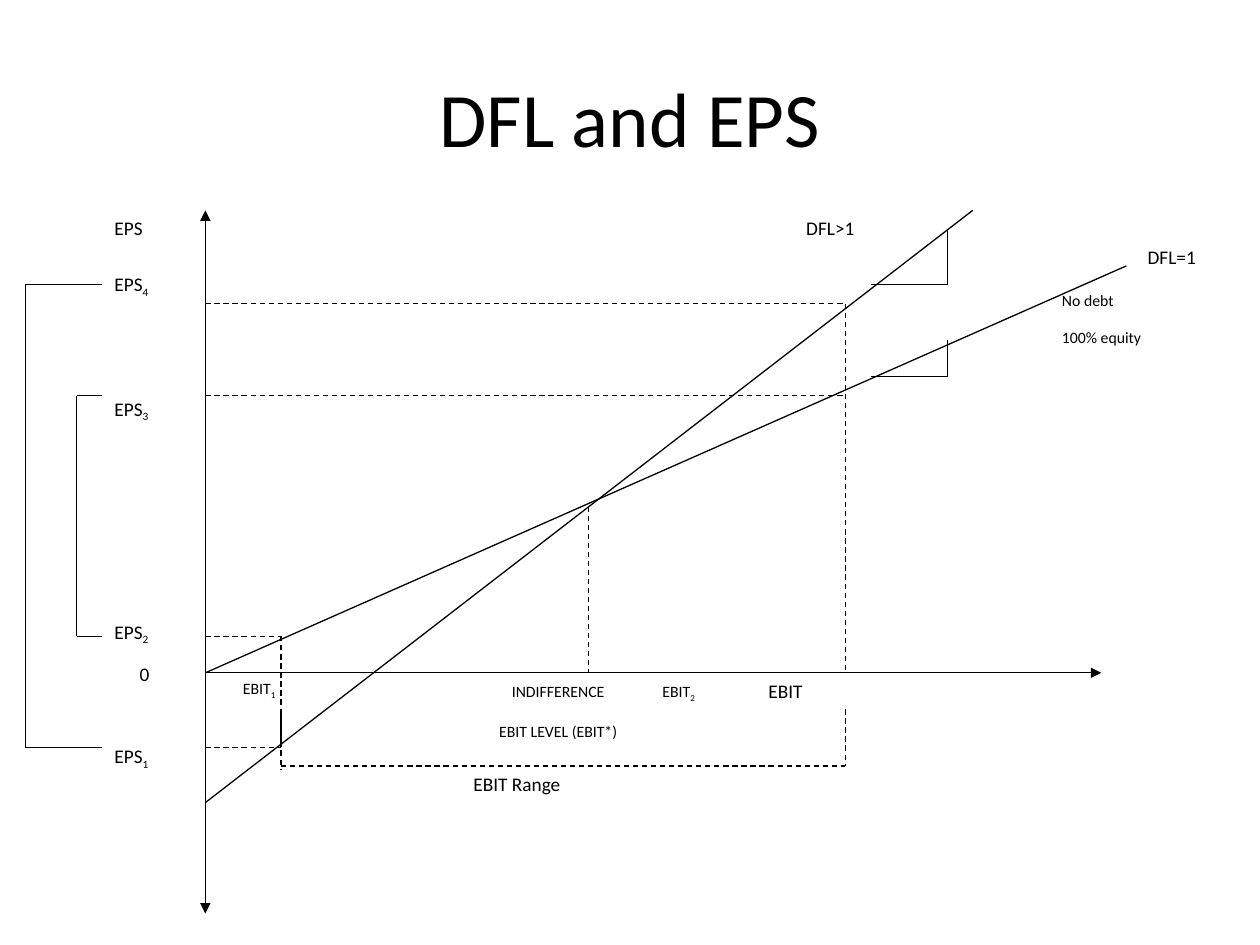
"""Build the DFL and EPS slide: a line diagram of EPS against EBIT."""
import pptx
import pptx.util
import pptx.dml.color
import pptx.enum.dml
import pptx.enum.shapes
import pptx.enum.text
import pptx.oxml
import pptx.oxml.ns

Inches = pptx.util.Inches
Align = pptx.enum.text.PP_ALIGN
INK = "000000"


def paint(color, code):
    color.rgb = pptx.dml.color.RGBColor.from_string(code)


def draw(x1, y1, x2, y2, dash=False, ends=()):
    line = slide.shapes.add_connector(
        pptx.enum.shapes.MSO_CONNECTOR.STRAIGHT,
        Inches(x1), Inches(y1), Inches(x2), Inches(y2))
    line.line.width = pptx.util.Pt(0.75)
    paint(line.line.color, INK)
    if dash:
        line.line.dash_style = pptx.enum.dml.MSO_LINE.DASH
    for end in ends:
        tip = pptx.oxml.parse_xml(
            f'<a:{end} {pptx.oxml.ns.nsdecls("a")} type="triangle"/>')
        line.line._get_or_add_ln().append(tip)
    flat = pptx.oxml.parse_xml(f'<a:effectLst {pptx.oxml.ns.nsdecls("a")}/>')
    line._element.spPr.append(flat)


deck = pptx.Presentation()
deck.slide_width, deck.slide_height = Inches(10), Inches(7.5)
slide = deck.slides.add_slide(deck.slide_layouts[5])

title = slide.shapes.title
title.left, title.top = Inches(0.5), Inches(0.3)
title.width, title.height = Inches(9), Inches(1.25)
frame = title.text_frame
frame.vertical_anchor = pptx.enum.text.MSO_ANCHOR.MIDDLE
para = frame.paragraphs[0]
para.alignment = Align.CENTER
run = para.add_run()
run.text = "DFL and EPS"
run.font.size = pptx.util.Pt(44)
run.font.name = "Calibri"
paint(run.font.color, INK)

left, zero = 1.63, 5.34
low, mid, high = 2.23, 4.67, 6.71
eps1, eps2, eps3, eps4 = 5.93, 5.05, 3.14, 2.41
base = 6.08

draw(left, zero, 8.74, zero, ends=["tailEnd"])
draw(left, 7.25, left, 1.67, ends=["headEnd", "tailEnd"])
draw(left, 6.37, 7.72, 1.67)
draw(left, zero, 8.94, 2.11)

for x, y in [(low, eps2), (low, eps1), (high, eps4), (high, eps3)]:
    draw(left, y, x, y, dash=True)
for x, top, end in [(low, eps2, eps1), (mid, 4.02, zero), (high, eps4, zero),
                    (low, 5.67, 6.11), (high, 5.63, base)]:
    draw(x, top, x, end, dash=True)
draw(low, base, high, base, dash=True)

for x, top, end in [(0.61, eps3, eps2), (0.2, 2.26, eps1)]:
    draw(x, top, x, end)
    for y in (top, end):
        draw(x, y, 0.81, y)

for top, end in [(2.7, 2.99), (1.82, 2.26)]:
    draw(7.52, top, 7.52, end)
    draw(6.91, end, 7.52, end)

labels = [
    (0.81, 1.67, 0.8, 11, [("EPS", "")]),
    (0.81, 2.11, 0.8, 11, [("EPS", "4")]),
    (0.81, 3.1, 0.8, 11, [("EPS", "3")]),
    (0.81, 4.87, 0.8, 11, [("EPS", "2")]),
    (1.01, 5.21, 0.6, 11, [("0", "")]),
    (0.81, 5.86, 0.8, 11, [("EPS", "1")]),
    (1.83, 5.34, 0.8, 9, [("EBIT", "1")]),
    (3.68, 5.36, 1.5, 9, [("INDIFFERENCE", ""), ("EBIT LEVEL (EBIT*)", "")]),
    (5.16, 5.36, 0.8, 9, [("EBIT", "2")]),
    (6, 5.34, 0.8, 11, [("EBIT", "")]),
    (3.66, 6.08, 1.63, 11, [("EBIT Range", "")]),
    (8.33, 2.26, 1.42, 9, [("No debt", ""), ("100% equity", "")]),
    (6.3, 1.67, 1.22, 11, [("DFL>1", "")]),
    (9.01, 1.9, 0.9, 11, [("DFL=1", "")]),
]
for x, y, wide, size, rows in labels:
    box = slide.shapes.add_textbox(
        Inches(x), Inches(y), Inches(wide), Inches(0.32 * len(rows)))
    frame = box.text_frame
    frame.word_wrap = True
    for i, (word, sub) in enumerate(rows):
        para = frame.add_paragraph() if i else frame.paragraphs[0]
        para.space_after = pptx.util.Pt(10)
        if rows[0][0] == "INDIFFERENCE":
            para.alignment = Align.CENTER
            para.space_after = pptx.util.Pt(12)
        for text in filter(None, (word, sub)):
            run = para.add_run()
            run.text = text
            run.font.size = pptx.util.Pt(size)
            run.font.name = "Calibri"
            paint(run.font.color, INK)
        if sub:
            run.font._element.set("baseline", "-25000")

deck.save("out.pptx")
